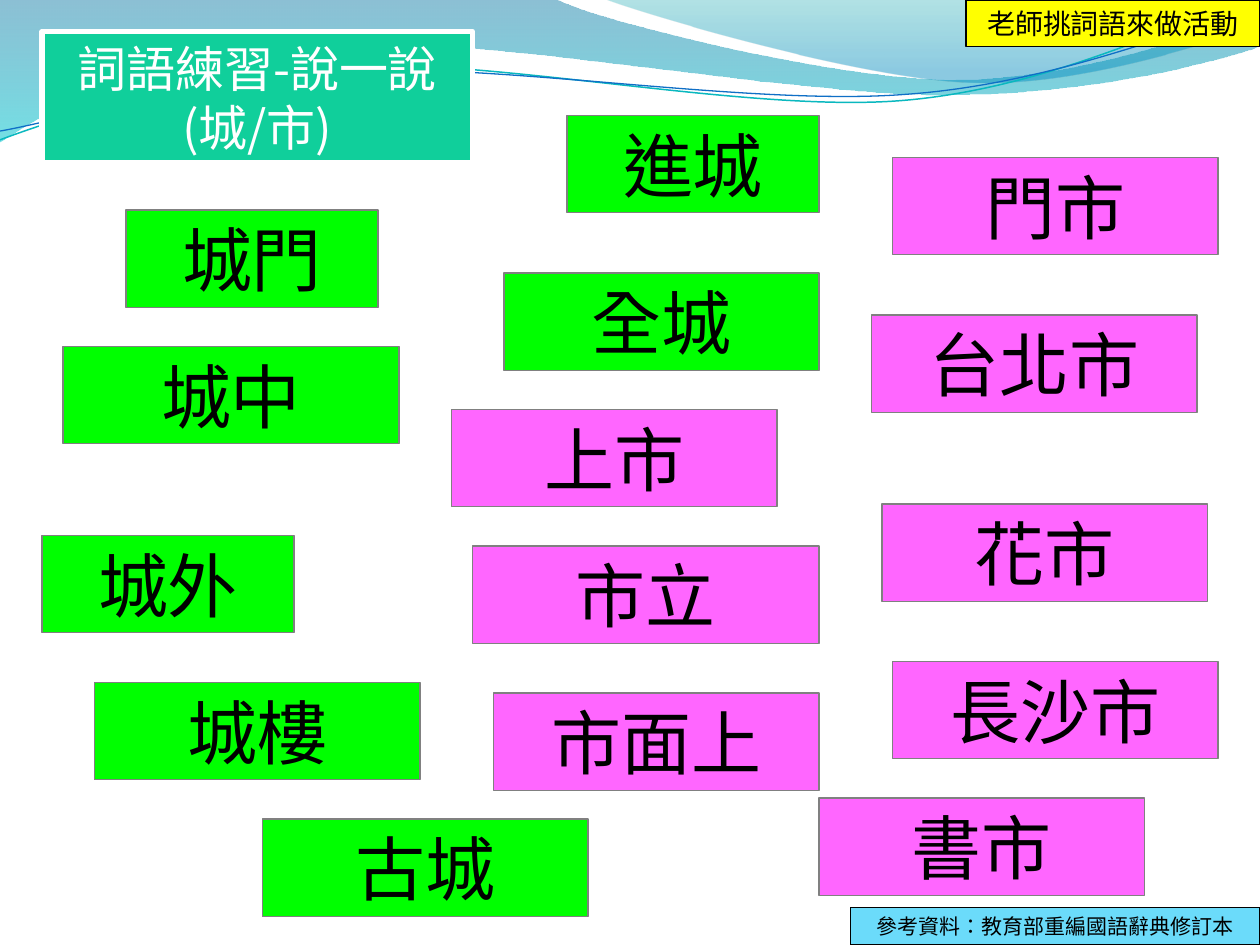
import math

from lxml import etree
from pptx import Presentation
from pptx import util as u
from pptx.dml.color import RGBColor
from pptx.enum import shapes, text
from pptx.oxml import parse_xml
from pptx.oxml.ns import nsdecls, qn

FONT = "Noto Sans CJK SC"
BLACK = RGBColor(0x00, 0x00, 0x00)
WHITE = RGBColor(0xFF, 0xFF, 0xFF)
GRAY = RGBColor(0x80, 0x80, 0x80)
GREEN = RGBColor(0x00, 0xFF, 0x00)
PINK = RGBColor(0xFF, 0x66, 0xFF)
TEAL = RGBColor(0x10, 0xCF, 0x9B)
YELLOW = RGBColor(0xFF, 0xFF, 0x00)
SKY = RGBColor(0x6B, 0xDB, 0xFA)
CYAN_LINE = RGBColor(0x0A, 0xB8, 0xBF)
BLUE_LINE = RGBColor(0x0F, 0x6F, 0xC6)

# Cards sit on a grid of twelfths of an inch
CELL = u.Inches(1) // 12
CARD_ROWS = 9.28

# The two thin curves are tilted about a common centre, in inches
TILT = -2.7
TILT_CENTER = (4.99, 0.58)

# Word, column, row, width in columns
CITY_WALL_WORDS = [
    ("全城", 48, 26, 30), ("城外", 4, 51, 24), ("城門", 12, 20, 24),
    ("城中", 6, 33, 32), ("城樓", 9, 65, 31), ("古城", 25, 78, 31),
    ("進城", 54, 11, 24),
]
MARKET_WORDS = [
    ("市立", 45, 52, 33), ("書市", 78, 76, 31), ("門市", 85, 15, 31),
    ("市面上", 47, 66, 31), ("上市", 43, 39, 31), ("花市", 84, 48, 31),
    ("台北市", 83, 30, 31), ("長沙市", 85, 63, 31),
]

# Outlines in inches: a pair is a corner, three pairs are a Bézier curve
BROAD_WAVE = [
    (0, 0), (4.4, -0.01),
    ((4.76, 0.17), (6.64, 0.63), (7.58, 0.63)),
    ((8.53, 0.63), (9.58, 0.26), (10, 0.09)),
    (10.01, 0.36),
    ((9.83, 0.44), (8.7, 0.76), (7.46, 0.75)),
    ((6.22, 0.75), (3.82, 0.28), (2.57, 0.34)),
    ((1.29, 0.36), (0.46, 0.83), (-0.01, 1.13)),
]
RIGHT_WAVE = [
    (4.79, -0.01),
    ((5.09, 0.11), (6.82, 0.62), (7.69, 0.65)),
    ((8.56, 0.69), (9.61, 0.32), (10, 0.21)),
    (10, 0),
]
CYAN_CURVE = [
    (0, 1.11),
    ((0.48, 0.93), (1.58, 0.57), (2.77, 0.52)),
    ((3.95, 0.47), (5.93, 0.89), (7.13, 0.8)),
    ((8.33, 0.71), (9.38, 0.15), (9.98, -0.02)),
]
BLUE_CURVE = [
    (0, 1.04),
    ((0.47, 0.96), (1.64, 0.61), (2.83, 0.56)),
    ((4.03, 0.51), (5.97, 0.84), (7.17, 0.75)),
    ((8.36, 0.67), (9.41, 0.21), (10, 0.06)),
]


def level(x, y):
    """Undo the tilt of a point."""
    cx, cy = TILT_CENTER
    a = math.radians(-TILT)
    dx, dy = x - cx, y - cy
    return (cx + dx * math.cos(a) - dy * math.sin(a),
            cy + dx * math.sin(a) + dy * math.cos(a))


def add_outline(s, outline, close, place=lambda x, y: (x, y)):
    """Freeform whose triples of points become Bézier curves."""
    steps = [step if len(step) == 3 else (step,) for step in outline]
    points = [tuple(u.Inches(v) for v in place(*pt))
              for step in steps for pt in step]
    builder = s.shapes.build_freeform(*points[0])
    builder.add_line_segments(points[1:], close=close)
    sp = builder.convert_to_shape()
    sp.shadow.inherit = False
    segments = iter(list(sp._element.iter(qn("a:lnTo"))))
    for step in steps[1:]:
        parts = [next(segments) for _ in step]
        if len(parts) == 3:
            curve = etree.Element(qn("a:cubicBezTo"))
            parts[0].addprevious(curve)
            for part in parts:
                curve.append(part[0])
                part.getparent().remove(part)
    return sp


def add_wave(s, outline, stops):
    """Closed shape with a see-through gradient from top to bottom."""
    sp = add_outline(s, outline, True)
    sp.line.fill.background()
    marks = "".join(
        f'<a:gs pos="{pos * 1000}"><a:srgbClr val="{color}">'
        f'<a:alpha val="{alpha * 1000}"/></a:srgbClr></a:gs>'
        for pos, color, alpha in stops)
    grad = parse_xml(
        f'<a:gradFill {nsdecls("a")} rotWithShape="1"><a:gsLst>{marks}</a:gsLst>'
        '<a:lin ang="5400000" scaled="0"/></a:gradFill>')
    sp._element.spPr.find(qn("a:custGeom")).addnext(grad)


def add_curve(s, outline, color, width):
    sp = add_outline(s, outline, False, level)
    sp.rotation = TILT
    sp.fill.background()
    sp.line.color.rgb = color
    sp.line.width = u.Pt(width)


def add_box(s, words, col, row, cols, rows, fill, size,
            line=BLACK, line_width=0.75, color=BLACK):
    sp = s.shapes.add_shape(
        shapes.MSO_SHAPE.RECTANGLE,
        *(round(n * CELL) for n in (col, row, cols, rows)))
    sp.shadow.inherit = False
    sp.fill.solid()
    sp.fill.fore_color.rgb = fill
    sp.line.color.rgb = line
    sp.line.width = u.Pt(line_width)
    tf = sp.text_frame
    tf.word_wrap = True
    tf.vertical_anchor = text.MSO_ANCHOR.MIDDLE
    p = tf.paragraphs[0]
    p.text = words
    p.alignment = text.PP_ALIGN.CENTER
    p.font.size = u.Pt(size)
    p.font.color.rgb = color
    p.font.name = FONT
    # East Asian characters take their own font and language setting
    props = p._p.pPr.find(qn("a:defRPr"))
    props.set("lang", "zh-TW")
    props.find(qn("a:latin")).addnext(
        parse_xml(f'<a:ea {nsdecls("a")} typeface="{FONT}"/>'))


def main():
    prs = Presentation()
    prs.slide_width, prs.slide_height = u.Inches(10), u.Inches(7.5)
    s = prs.slides.add_slide(prs.slide_layouts[6])

    # Wave header
    add_wave(s, BROAD_WAVE, [(0, "0074A1", 45), (100, "00C6CF", 55)])
    add_wave(s, RIGHT_WAVE, [(0, "00A1A9", 30), (80, "008BBF", 45)])
    add_curve(s, CYAN_CURVE, CYAN_LINE, 0.85)
    add_curve(s, BLUE_CURVE, BLUE_LINE, 0.75)

    # Title
    add_box(s, "詞語練習-說一說(城/市)", 4, 3, 41, 12.5, TEAL, 28,
            WHITE, 3, WHITE)

    # Word cards
    for cards, fill in ((CITY_WALL_WORDS, GREEN), (MARKET_WORDS, PINK)):
        for word, col, row, cols in cards:
            add_box(s, word, col, row, cols, CARD_ROWS, fill, 40, GRAY)

    # Teacher's note and reference
    add_box(s, "老師挑詞語來做活動", 92, 0, 28, 4.44, YELLOW, 16)
    add_box(s, "參考資料：教育部重編國語辭典修訂本", 81, 86.4, 39, 3.6, SKY, 12)

    prs.save("out.pptx")


if __name__ == "__main__":
    main()
